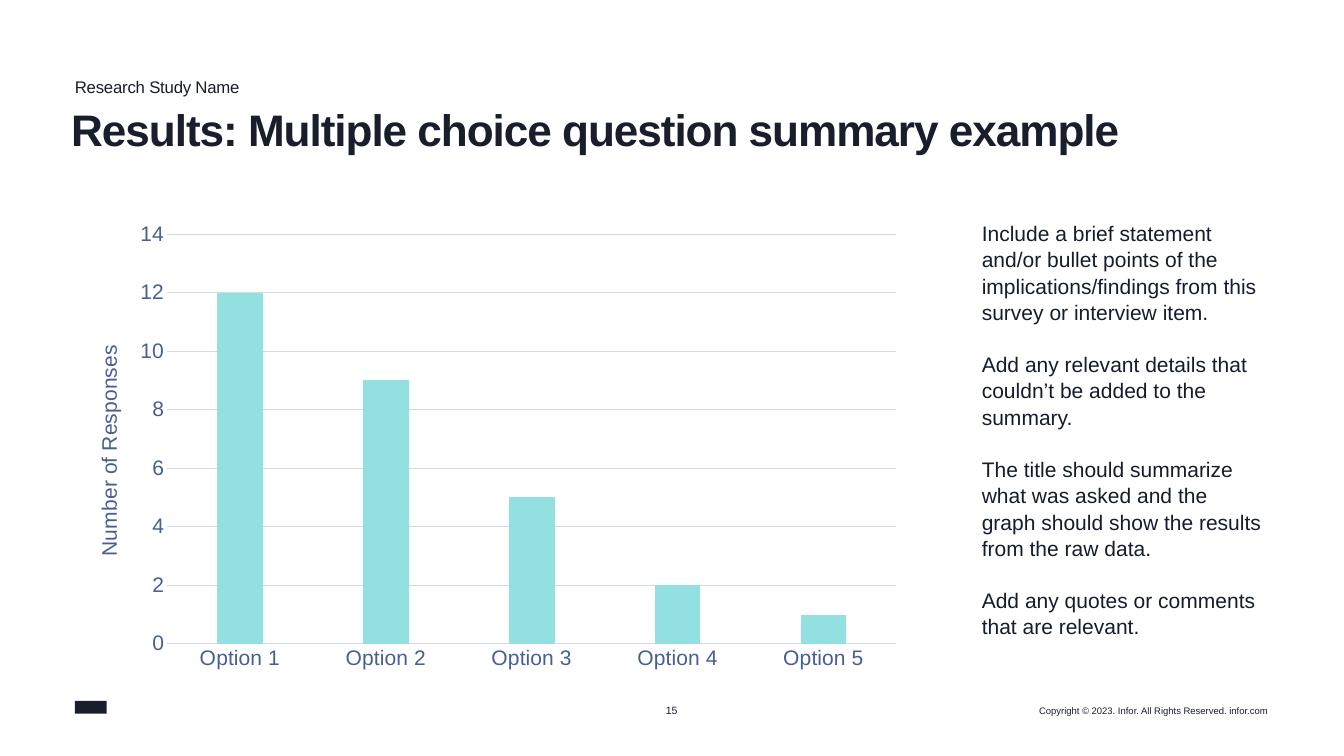
from lxml import etree
from pptx import Presentation
from pptx.chart.data import CategoryChartData
from pptx.dml.color import RGBColor
from pptx.enum.chart import XL_CHART_TYPE, XL_TICK_MARK
from pptx.enum.shapes import MSO_SHAPE
from pptx.enum.text import MSO_ANCHOR, MSO_AUTO_SIZE, PP_ALIGN
from pptx.oxml.ns import qn
from pptx.util import Inches, Pt

LEFT, CENTER, RIGHT = PP_ALIGN.LEFT, PP_ALIGN.CENTER, PP_ALIGN.RIGHT
TOP, MIDDLE = MSO_ANCHOR.TOP, MSO_ANCHOR.MIDDLE
NO_TICKS = XL_TICK_MARK.NONE

# Content
STUDY = "Research Study Name"
TITLE = "Results: Multiple choice question summary example"
FINDINGS = [
    "Include a brief statement and/or bullet points of the implications/findings "
    "from this survey or interview item.",
    "Add any relevant details that couldn’t be added to the summary.",
    "The title should summarize what was asked and the graph should show the "
    "results from the raw data.",
    "Add any quotes or comments that are relevant.",
]
RESPONSES = {"Option 1": 12, "Option 2": 9, "Option 3": 5, "Option 4": 2, "Option 5": 1}
AXIS_TITLE = "Number of Responses"
PAGE = "15"
COPYRIGHT = "Copyright © 2023. Infor. All Rights Reserved. infor.com"

THEME = {
    "font": "Arial",
    "ink": RGBColor.from_string("181E2C"),
    "body_ink": RGBColor.from_string("151C2C"),
    "axis": RGBColor.from_string("475F95"),
    "grid": RGBColor.from_string("D2D9E9"),
    "bar": RGBColor.from_string("93E0E0"),
    "title": 42, "study": 16, "body": 20, "page": 10, "copyright": 9,
}


def style_font(font, size, color, bold=False):
    font.name = THEME["font"]
    font.size = Pt(THEME[size])
    font.bold = bold
    font.color.rgb = THEME[color]


def write(shape, texts, size, color="ink", align=LEFT, anchor=TOP, wrap=True,
          inset=(0, 0), bold=False, line=1.0, gap=0, tracking=0):
    frame = shape.text_frame
    frame.auto_size = MSO_AUTO_SIZE.NONE
    frame.word_wrap = wrap
    frame.vertical_anchor = anchor
    frame.margin_left = frame.margin_right = Inches(inset[0])
    frame.margin_top = frame.margin_bottom = Inches(inset[1])
    for i, text in enumerate(texts):
        paragraph = frame.add_paragraph() if i else frame.paragraphs[0]
        paragraph.alignment = align
        paragraph.line_spacing = line
        paragraph.space_before = Pt(gap if i else 0)
        run = paragraph.add_run()
        run.text = text
        style_font(paragraph.font, size, color, bold)
        if tracking:
            run.font._element.set("spc", str(int(tracking * 100)))


def set_layout(parent, index, **values):
    """Give a chart part a manual layout, in fractions of the chart."""
    for old in parent.findall(qn("c:layout")):
        parent.remove(old)
    layout = etree.Element(qn("c:layout"))
    manual = etree.SubElement(layout, qn("c:manualLayout"))
    if "w" in values:
        etree.SubElement(manual, qn("c:layoutTarget")).set("val", "inner")
    for side in ("x", "y"):
        etree.SubElement(manual, qn(f"c:{side}Mode")).set("val", "edge")
    for name, value in values.items():
        etree.SubElement(manual, qn(f"c:{name}")).set("val", str(value))
    parent.insert(index, layout)


def add_responses_chart(slide, *place):
    data = CategoryChartData()
    data.categories = list(RESPONSES)
    data.add_series("Series 1", list(RESPONSES.values()))
    chart = slide.shapes.add_chart(XL_CHART_TYPE.COLUMN_CLUSTERED, *place, data).chart
    chart.has_legend = chart.has_title = False
    style_font(chart.font, "body", "body_ink")

    # Bars
    plot = chart.plots[0]
    plot.gap_width, plot.overlap = 219, -27
    plot.vary_by_categories = False
    bars = plot.series[0].format.fill
    bars.solid()
    bars.fore_color.rgb = THEME["bar"]

    # Axes
    options, counts = chart.category_axis, chart.value_axis
    for axis in (options, counts):
        axis.major_tick_mark = axis.minor_tick_mark = NO_TICKS
        style_font(axis.tick_labels.font, "body", "axis")
    counts.minimum_scale, counts.maximum_scale, counts.major_unit = 0, 14, 2
    counts.format.line.fill.background()
    counts.has_major_gridlines = True
    for line in (options.format.line, counts.major_gridlines.format.line):
        line.color.rgb = THEME["grid"]
        line.width = Pt(0.75)

    # Axis title
    heading = counts.axis_title.text_frame.paragraphs[0]
    heading.add_run().text = AXIS_TITLE
    style_font(heading.font, "body", "axis")
    set_layout(counts.axis_title._element, 1, x=0.02, y=0.27)
    set_layout(chart._chartSpace.chart.plotArea, 0, x=0.11, y=0.04, w=0.87, h=0.88)


def main():
    prs = Presentation()
    prs.slide_width, prs.slide_height = Inches(17.78), Inches(10)
    slide = prs.slides.add_slide(prs.slide_layouts[5])

    def text_box(*place):
        return slide.shapes.add_textbox(*map(Inches, place))

    # Heading
    title = slide.shapes.title
    title.left, title.top = Inches(0.94), Inches(1.44)
    title.width, title.height = Inches(15.81), Inches(1.2)
    write(title, [TITLE], "title", bold=True, line=0.9, tracking=-1)
    write(text_box(0.99, 1, 15.79, 0.23), [STUDY], "study", line=1.05, tracking=-0.2)

    # Results and findings
    add_responses_chart(slide, *map(Inches, (0.99, 2.85, 11.09, 6.16)))
    write(text_box(12.89, 2.85, 3.9, 5.49), FINDINGS, "body", "body_ink",
          inset=(0.1, 0.05), line=1.05, gap=24)

    # Footer, with a plain block as the mark
    mark = slide.shapes.add_shape(MSO_SHAPE.RECTANGLE,
                                  *map(Inches, (0.99, 9.27, 0.42, 0.17)))
    mark.shadow.inherit = False
    mark.fill.solid()
    mark.fill.fore_color.rgb = THEME["ink"]
    mark.line.fill.background()
    write(text_box(8.8, 9.31, 0.17, 0.17), [PAGE], "page",
          align=CENTER, anchor=MIDDLE, wrap=False)
    write(text_box(13.69, 9.32, 3.08, 0.15), [COPYRIGHT], "copyright",
          align=RIGHT, anchor=MIDDLE, wrap=False)

    prs.save("out.pptx")


if __name__ == "__main__":
    main()
